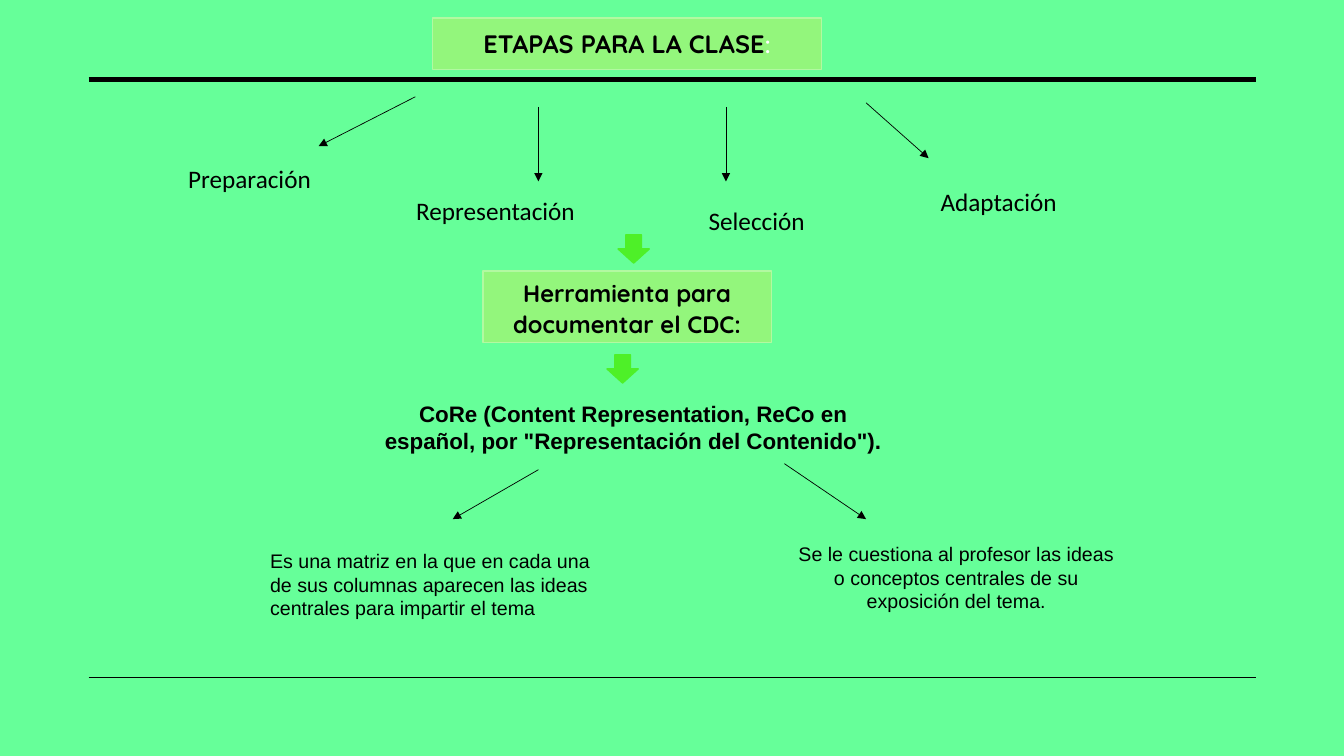
from lxml import etree
from pptx import Presentation
from pptx.dml.color import RGBColor
from pptx.enum.shapes import MSO_CONNECTOR, MSO_SHAPE
from pptx.enum.text import MSO_ANCHOR, PP_ALIGN
from pptx.oxml.ns import qn
from pptx.util import Inches, Pt

STRAIGHT = MSO_CONNECTOR.STRAIGHT
RECTANGLE = MSO_SHAPE.RECTANGLE
DOWN_ARROW = MSO_SHAPE.DOWN_ARROW
MIDDLE, TOP = MSO_ANCHOR.MIDDLE, MSO_ANCHOR.TOP
CENTER, LEFT = PP_ALIGN.CENTER, PP_ALIGN.LEFT

MINT = RGBColor(0x66, 0xFF, 0x99)
LIME = RGBColor(0x93, 0xF6, 0x7C)
PALE_LIME = RGBColor(0xB2, 0xF9, 0xA1)
BRIGHT_GREEN = RGBColor(0x4E, 0xF0, 0x28)
BLACK = RGBColor(0, 0, 0)
WHITE = RGBColor(0xFF, 0xFF, 0xFF)

RULES = [(0.79, 3.5), (6.72, 1)]
STAGES = [
    ("Preparación", 0.77, 1.57, 3.41, CENTER),
    ("Representación", 4.03, 1.89, 3.33, LEFT),
    ("Selección", 5.8, 1.99, 3.41, CENTER),
    ("Adaptación", 8.2, 1.8, 3.41, CENTER),
]
BRANCHES = [
    (4.12, 0.96, 3.16, 1.45),
    (5.34, 1.06, 5.34, 1.8),
    (7.2, 1.06, 7.2, 1.8),
    (8.59, 1.02, 9.21, 1.57),
    (5.34, 4.66, 4.49, 5.15),
    (7.78, 4.6, 8.59, 5.15),
]
STEPS = [(6.13, 2.33), (6.02, 3.52)]
CORE = 'CoRe (Content Representation, ReCo en español, por "Representación del Contenido").'
MATRIX = ("Es una matriz en la que en cada una de sus columnas aparecen "
          "las ideas centrales para impartir el tema")
QUESTION = ("Se le cuestiona al profesor las ideas o conceptos centrales "
            "de su exposición del tema.")


def add_run(paragraph, text, font="Calibri", size=18, color=BLACK, bold=False):
    run = paragraph.add_run()
    run.text = text
    run.font.name = font
    run.font.size = Pt(size)
    run.font.color.rgb = color
    run.font.bold = bold


def write(shape, text, align=CENTER, anchor=TOP, line_spacing=1.0, **run_format):
    frame = shape.text_frame
    frame.word_wrap = True
    frame.vertical_anchor = anchor
    paragraph = frame.paragraphs[0]
    paragraph.alignment = align
    paragraph.line_spacing = line_spacing
    add_run(paragraph, text, **run_format)
    return paragraph


def add_label(slide, left, top, width, height, text, **text_format):
    label = slide.shapes.add_textbox(
        Inches(left), Inches(top), Inches(width), Inches(height))
    write(label, text, **text_format)


def add_block(slide, preset, left, top, width, height, fill, outline):
    block = slide.shapes.add_shape(
        preset, Inches(left), Inches(top), Inches(width), Inches(height))
    block.shadow.inherit = False
    block.fill.solid()
    block.fill.fore_color.rgb = fill
    block.line.color.rgb = outline
    block.line.width = Pt(1)
    return block


def add_line(slide, x1, y1, x2, y2, width, arrow=False):
    line = slide.shapes.add_connector(
        STRAIGHT, Inches(x1), Inches(y1), Inches(x2), Inches(y2))
    line.line.color.rgb = BLACK
    line.line.width = Pt(width)
    properties = line._element.spPr
    if arrow:
        etree.SubElement(properties.find(qn("a:ln")), qn("a:tailEnd"), type="triangle")
    etree.SubElement(properties, qn("a:effectLst"))


def main():
    presentation = Presentation()
    presentation.slide_width = Inches(13.33)
    presentation.slide_height = Inches(7.5)
    slide = presentation.slides.add_slide(presentation.slide_layouts[6])
    slide.background.fill.solid()
    slide.background.fill.fore_color.rgb = MINT

    for y, width in RULES:
        add_line(slide, 0.88, y, 12.46, y, width)

    title = add_block(slide, RECTANGLE, 4.29, 0.18, 3.86, 0.51, LIME, PALE_LIME)
    heading = write(title, "ETAPAS PARA LA CLASE", anchor=MIDDLE,
                    font="Quicksand", bold=True)
    add_run(heading, ":", font="Lato", color=WHITE)

    for branch in BRANCHES:
        add_line(slide, *branch, 0.5, arrow=True)
    for name, left, top, width, align in STAGES:
        add_label(slide, left, top, width, 0.71, name, align=align)

    tool = add_block(slide, RECTANGLE, 4.79, 2.69, 2.86, 0.71, LIME, PALE_LIME)
    write(tool, "Herramienta para documentar el CDC:", anchor=MIDDLE,
          line_spacing=1.1, font="Quicksand", size=17, bold=True)
    for left, top in STEPS:
        add_block(slide, DOWN_ARROW, left, top, 0.31, 0.28, BRIGHT_GREEN, BRIGHT_GREEN)

    add_label(slide, 3.64, 3.92, 5.28, 0.64, CORE, font="Arial", size=16, bold=True)
    add_label(slide, 2.58, 5.4, 3.41, 0.81, MATRIX, align=LEFT, font="Arial", size=14)
    add_label(slide, 7.78, 5.33, 3.41, 0.81, QUESTION, font="Arial", size=14)

    presentation.save("out.pptx")


if __name__ == "__main__":
    main()
